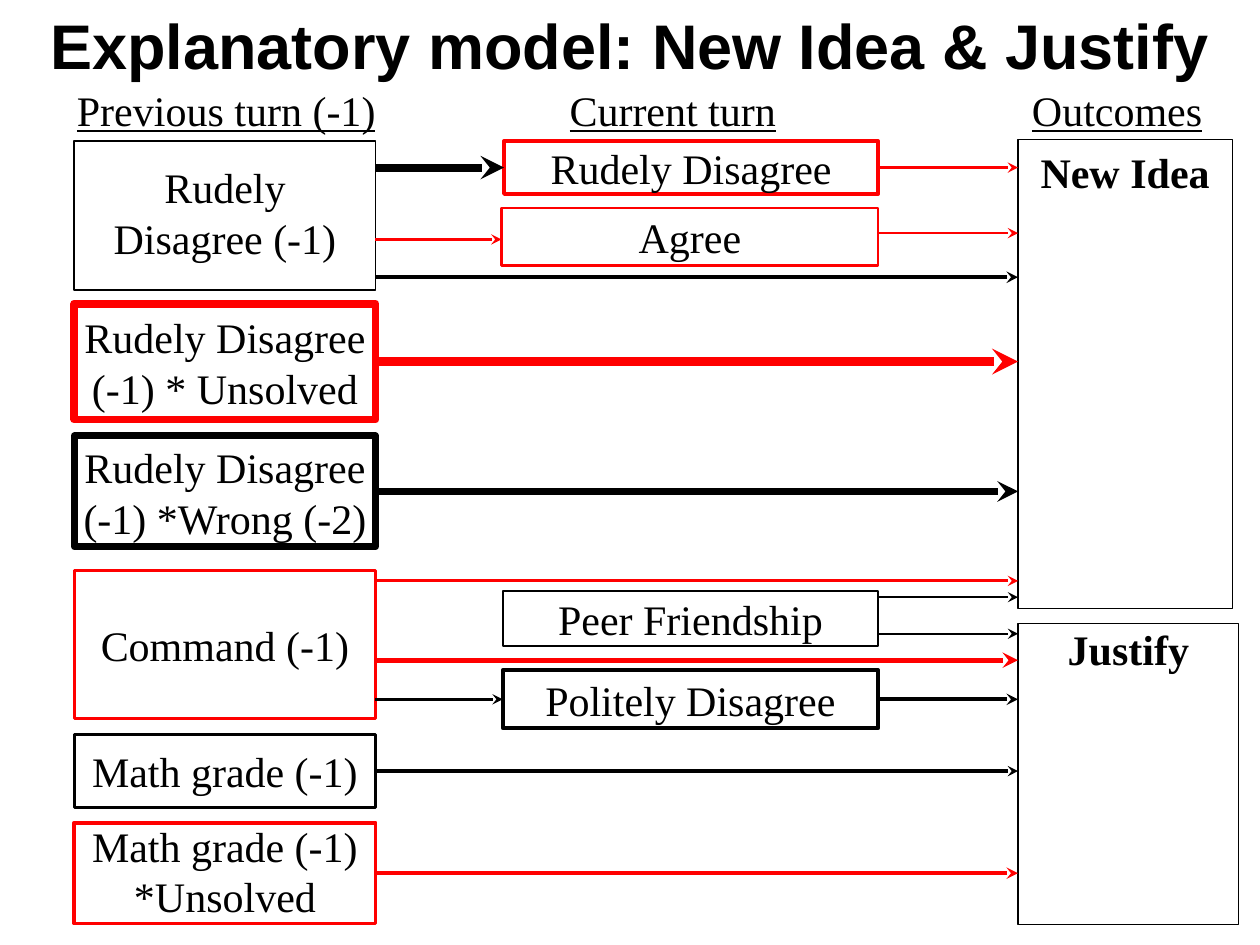
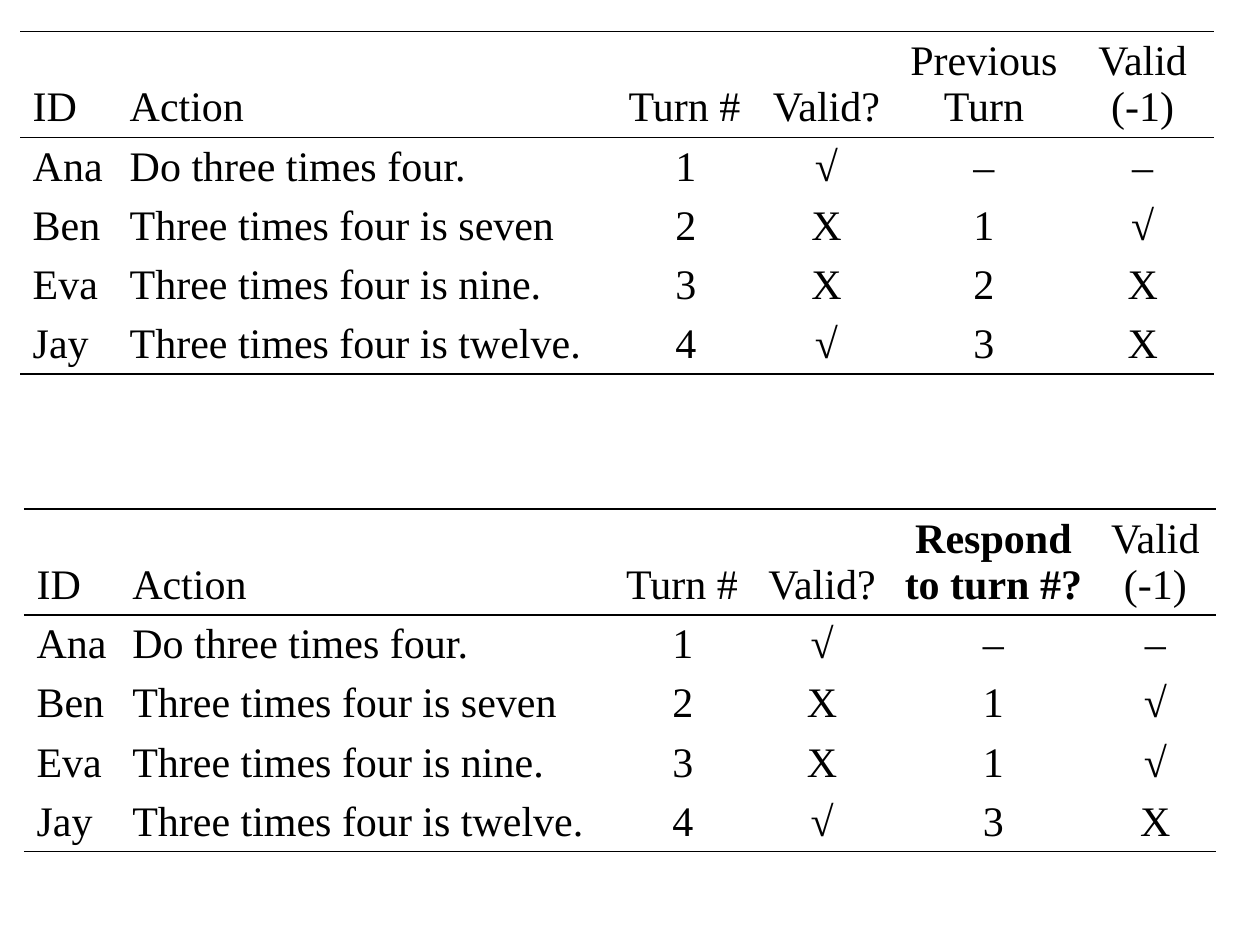
"""Builds the explanatory model diagram and the two turn-coding tables."""
from lxml import etree
from pptx import Presentation
from pptx import util as u
from pptx.dml.color import RGBColor
from pptx.enum import shapes, text
from pptx.oxml.ns import qn

BLACK = RGBColor(0x00, 0x00, 0x00)
RED = RGBColor(0xFF, 0x00, 0x00)
MIDDLE, TOP = text.MSO_ANCHOR.MIDDLE, text.MSO_ANCHOR.TOP
LEFT, CENTER = text.PP_ALIGN.LEFT, text.PP_ALIGN.CENTER
INSETS = (0.1, 0.05, 0.1, 0.05)
TIGHT = (0, 0.01, 0, 0)
NO_TABLE_STYLE = "{2D5ABB26-0587-4C30-8999-92F81FD0307C}"


def set_all(obj, values):
    for name, value in values.items():
        setattr(obj, name, value)


class Deck:
    body = {"name": "Times New Roman", "size": u.Pt(24), "bold": False}
    title_font = {"name": "Arial", "size": u.Pt(36), "bold": True}

    def __init__(self):
        self.prs = Presentation()
        set_all(self.prs, {"slide_width": u.Inches(10), "slide_height": u.Inches(7.5)})
        self.s = None

    def new_slide(self):
        self.s = self.prs.slides.add_slide(self.prs.slide_layouts[6])

    def style(self, font, **changes):
        set_all(font, {**self.body, **changes})
        font.color.rgb = BLACK

    def frame(self, sp, anchor, insets):
        tf = sp.text_frame
        sides = ("margin_left", "margin_top", "margin_right", "margin_bottom")
        set_all(tf, dict(zip(sides, map(u.Inches, insets))))
        set_all(tf, {"word_wrap": True, "vertical_anchor": anchor})
        return tf

    def textbox(self, at, anchor, insets, align):
        tf = self.frame(self.s.shapes.add_textbox(*map(u.Inches, at)), anchor, insets)
        p = tf.paragraphs[0]
        p.alignment = align
        return p

    def title(self, words):
        r = self.textbox((0, 0, 10, 0.7), TOP, INSETS, CENTER).add_run()
        r.text = words
        self.style(r.font, **self.title_font)

    def headings(self, at, words, stops):
        p = self.textbox(at, MIDDLE, (0.19, 0.05, 0, 0.05), LEFT)
        tabs = etree.SubElement(p._p.get_or_add_pPr(), qn("a:tabLst"))
        for stop in stops:
            etree.SubElement(tabs, qn("a:tab"), pos=str(u.Inches(stop)), algn="l")
        for i, word in enumerate(words):
            for piece in (["\t"] if i else []) + [word]:
                r = p.add_run()
                r.text = piece
                self.style(r.font, underline=piece == word)

    def box(self, words, at, color, width, anchor=MIDDLE, insets=INSETS, bold=False):
        sp = self.s.shapes.add_shape(shapes.MSO_SHAPE.RECTANGLE, *map(u.Inches, at))
        sp.shadow.inherit = False
        sp.fill.background()
        sp.line.color.rgb, sp.line.width = color, u.Pt(width)
        p = self.frame(sp, anchor, insets).paragraphs[0]
        set_all(p, {"text": words, "alignment": CENTER})
        self.style(p.runs[0].font, bold=bold)
        return sp

    def arrow(self, source, target, y, color, width):
        y = u.Inches(y)
        cx = self.s.shapes.add_connector(
            shapes.MSO_CONNECTOR.STRAIGHT, source.left + source.width, y, target.left, y)
        cx.line.color.rgb, cx.line.width = color, u.Pt(width)
        etree.SubElement(cx.line._get_or_add_ln(), qn("a:tailEnd"), type="stealth")
        etree.SubElement(cx._element.spPr, qn("a:effectLst"))
        for sp, join, side in ((source, cx.begin_connect, 3), (target, cx.end_connect, 1)):
            if abs(sp.top + sp.height / 2 - y) < u.Inches(0.01):
                join(sp, side)

    def rules(self, cell, above, below):
        tcPr = cell._tc.get_or_add_tcPr()
        sides = (("a:lnL", False), ("a:lnR", False), ("a:lnT", above), ("a:lnB", below))
        for i, (tag, shown) in enumerate(sides):
            ln = etree.Element(qn(tag), w=str(u.Pt(1)))
            fill = etree.SubElement(ln, qn("a:solidFill" if shown else "a:noFill"))
            if shown:
                etree.SubElement(fill, qn("a:srgbClr"), val=str(BLACK))
            tcPr.insert(i, ln)

    def table(self, left, top, widths, rows, bold_header=None):
        heights = [0.84] + [0.47] * (len(rows) - 1)
        size = (left, top, sum(widths), sum(heights))
        frame = self.s.shapes.add_table(len(rows), len(widths), *map(u.Inches, size))
        tbl = frame.table
        set_all(tbl, {"first_row": False, "horz_banding": False})
        tbl._tbl.tblPr.find(qn("a:tableStyleId")).text = NO_TABLE_STYLE
        for col, width in zip(tbl.columns, widths):
            col.width = u.Inches(width)
        for i, (row, height) in enumerate(zip(rows, heights)):
            tbl.rows[i].height = u.Inches(height)
            for j, words in enumerate(row):
                cell = tbl.cell(i, j)
                cell.fill.background()
                set_all(cell, {"text": words, "vertical_anchor": text.MSO_ANCHOR.BOTTOM})
                for p in cell.text_frame.paragraphs:
                    p.alignment = LEFT if j < 2 or (i, j) == (0, 2) else CENTER
                    self.style(p.runs[0].font, bold=words in ("√", bold_header))
                self.rules(cell, above=i < 2, below=i in (0, len(rows) - 1))


def model_slide(d):
    d.new_slide()
    d.title("Explanatory model: New Idea & Justify")
    d.headings((0.42, 0.62, 9.42, 0.5),
               ("Previous turn (-1)", "Current turn", "Outcomes"), (3.91, 7.58))

    new_idea = d.box("New Idea", (8.08, 1.11, 1.7, 3.72), BLACK, 0.75, TOP, bold=True)
    justify = d.box("Justify", (8.08, 4.95, 1.75, 2.39), BLACK, 0.75, TOP, (0, 0, 0, 0), True)

    rude_now = d.box("Rudely Disagree", (4, 1.12, 2.97, 0.42), RED, 2)
    agree = d.box("Agree", (3.98, 1.65, 2.99, 0.46), RED, 1.5)
    friend = d.box("Peer Friendship", (3.99, 4.69, 2.98, 0.44), BLACK, 1.25)
    polite = d.box("Politely Disagree", (3.99, 5.32, 2.98, 0.46), BLACK, 2.25)

    def previous(words, top, height, color, width, insets=INSETS):
        return d.box(words, (0.59, top, 2.39, height), color, width, insets=insets)

    rude = previous("Rudely Disagree (-1)", 1.12, 1.18, BLACK, 1, (0.1, 0, 0.1, 0.05))
    unsolved = previous("Rudely Disagree (-1) * Unsolved", 2.41, 0.92, RED, 4.5, TIGHT)
    wrong = previous("Rudely Disagree (-1) *Wrong (-2)", 3.46, 0.88, BLACK, 4, TIGHT)
    command = previous("Command (-1)", 4.53, 1.17, RED, 1.75)
    grade = previous("Math grade (-1)", 5.83, 0.58, BLACK, 2)
    grade_unsolved = previous("Math grade (-1) *Unsolved", 6.53, 0.8, RED, 2.25,
                              (0.1, 0.01, 0.1, 0.05))

    for effect in (
        (rude, rude_now, 1.33, BLACK, 4.5),
        (rude, agree, 1.9, RED, 1.5),
        (rude, new_idea, 2.2, BLACK, 2.25),
        (rude_now, new_idea, 1.33, RED, 2),
        (agree, new_idea, 1.85, RED, 1.5),
        (unsolved, new_idea, 2.87, RED, 5),
        (wrong, new_idea, 3.9, BLACK, 4),
        (command, new_idea, 4.61, RED, 1.75),
        (friend, new_idea, 4.74, BLACK, 1.25),
        (friend, justify, 5.03, BLACK, 1.25),
        (command, justify, 5.24, RED, 3),
        (command, polite, 5.55, BLACK, 1.75),
        (polite, justify, 5.55, BLACK, 2.25),
        (grade, justify, 6.12, BLACK, 2),
        (grade_unsolved, justify, 6.93, RED, 2.25),
    ):
        d.arrow(*effect)


def turns_slide(d):
    d.new_slide()
    shared = (
        ("ID", "Action", "Turn #", "Valid?"),
        ("Ana", "Do three times four.", "1", "√"),
        ("Ben", "Three times four is seven", "2", "X"),
        ("Eva", "Three times four is nine.", "3", "X"),
        ("Jay", "Three times four is twelve.", "4", "√"),
    )

    def rows(earlier_turns, earlier_valid):
        return [a + b for a, b in zip(shared, zip(earlier_turns, earlier_valid))]

    lag = "Valid\n(-1)"
    respond = "Respond\nto turn #?"
    d.table(0.16, 0.25, (0.77, 3.96, 1.11, 1.12, 1.38, 1.14),
            rows(("Previous\nTurn", "–", "1", "2", "3"), (lag, "–", "√", "X", "X")))
    d.table(0.19, 4.04, (0.76, 3.92, 1.1, 1.11, 1.61, 0.96),
            rows((respond, "–", "1", "1", "3"), (lag, "–", "√", "√", "X")), respond)


def main():
    d = Deck()
    model_slide(d)
    turns_slide(d)
    d.prs.save("out.pptx")


if __name__ == "__main__":
    main()
